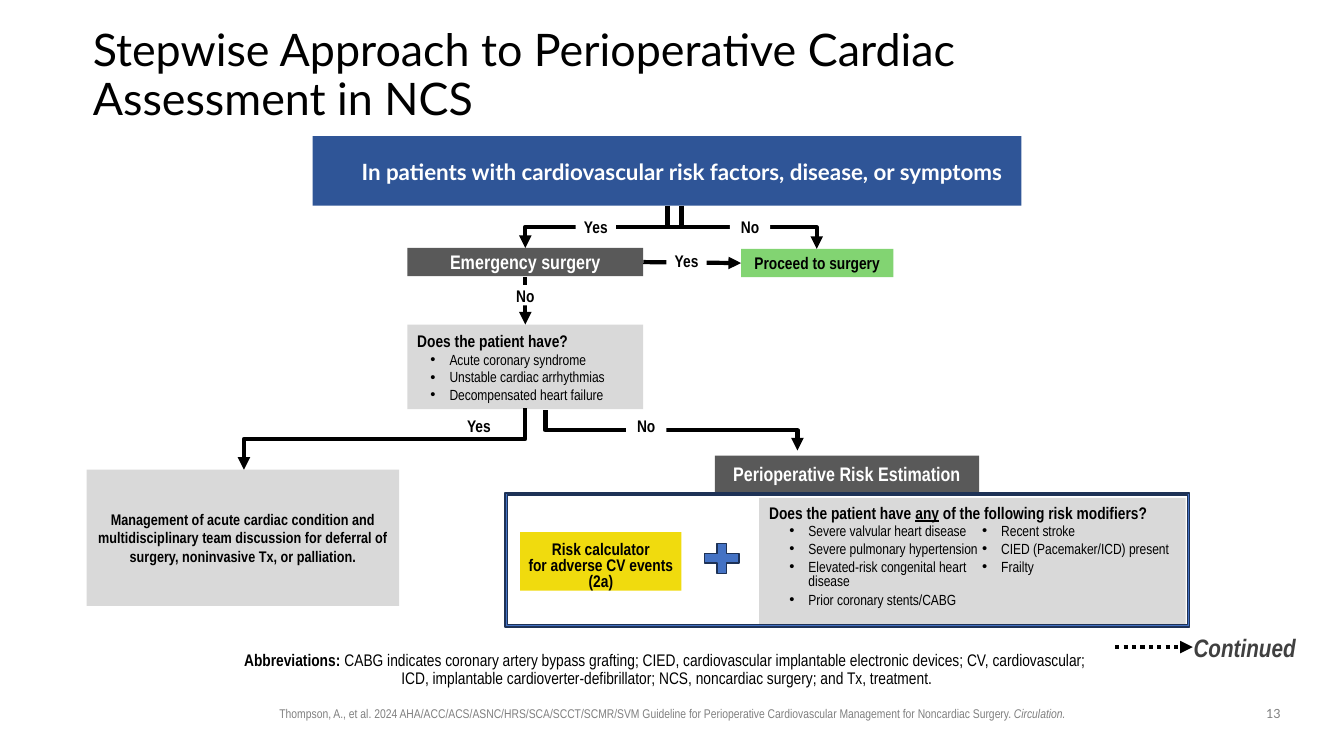
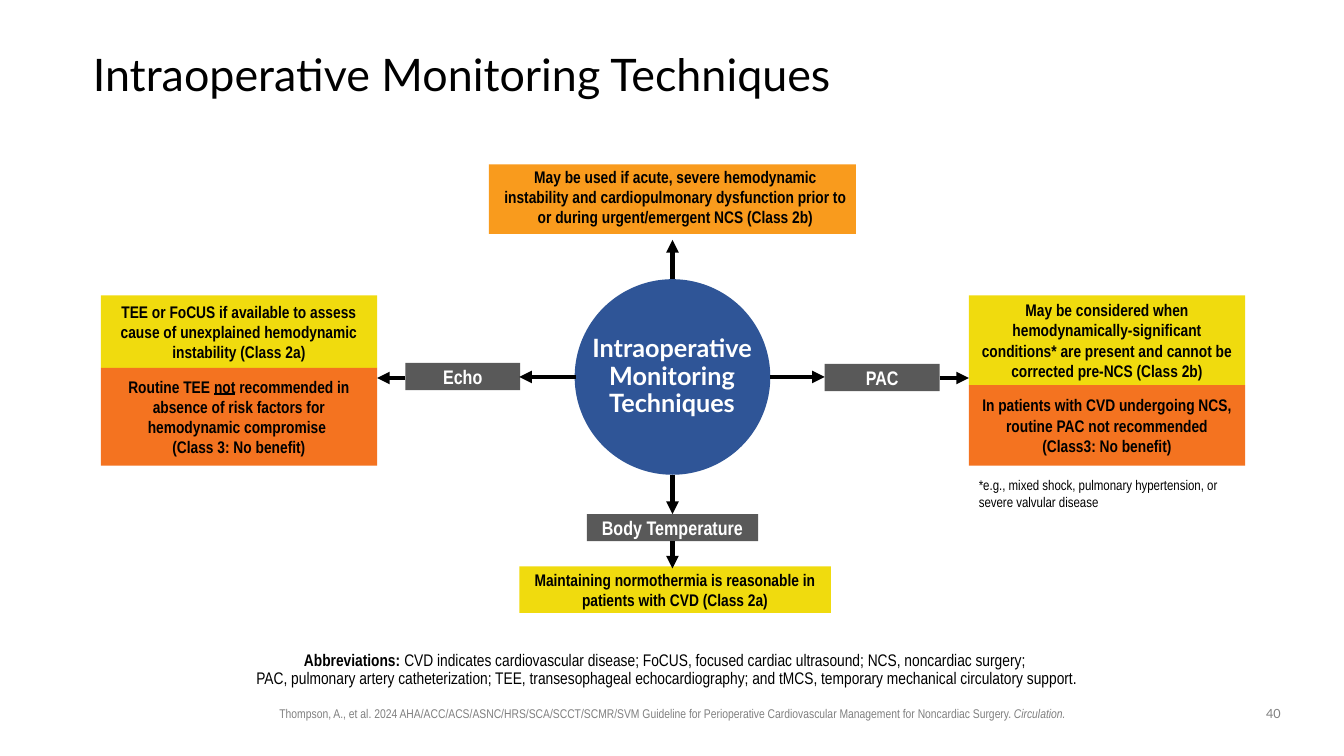
from copy import deepcopy

from lxml import etree
from pptx import Presentation
from pptx import util as u
from pptx.dml.color import RGBColor
from pptx.enum import dml, shapes, text
from pptx.oxml.ns import qn

PX = 9144  # EMU per px, 100 px to the inch
COLORS = {
    "black": "000000", "white": "FFFFFF", "navy": "2F5597", "blue": "4472C4",
    "outline": "1E3256", "dark": "595959", "ink": "404040", "pale": "D9D9D9",
    "grey": "808080", "green": "82D472", "yellow": "F0DB0E",
    "amber": "F99B1D", "orange": "F47320",
}
NARROW, LATO = "Arial Narrow", "Lato"
KIND = shapes.MSO_SHAPE
ALIGN = {"left": text.PP_ALIGN.LEFT, "center": text.PP_ALIGN.CENTER}
ANCHOR = {"top": text.MSO_ANCHOR.TOP, "middle": text.MSO_ANCHOR.MIDDLE,
          "bottom": text.MSO_ANCHOR.BOTTOM}

# ---- Shared content and styles ----
CITATION = [
    ("Thompson, A., et al. 2024 AHA/ACC/ACS/ASNC/HRS/SCA/SCCT/SCMR/SVM Guideline for "
     "Perioperative Cardiovascular Management for Noncardiac Surgery. ", ""),
    ("Circulation.", "i"),
]
STYLES = {
    "header": dict(fill="navy", color="white", size=16, font=LATO, spacing=0.9,
                   inset=(30, 4, 0, 0)),
    "step": dict(fill="dark", color="white", size=14),
    "go": dict(fill="green"),
    "management": dict(fill="pale", size=11),
    "yellow": dict(fill="yellow"),
    "orange": dict(fill="orange"),
    "amber": dict(fill="amber", inset=(13, 3, 7, 7)),
    "calculator": dict(fill="yellow", spacing=0.8, anchor="bottom", inset=(0, 0, 0, 0)),
    "question": dict(fill="pale", align="left"),
    "modifiers": dict(fill="pale", align="left", anchor="top"),
    "label": dict(fill="white", anchor="top", inset=(0, 0, 0, 0)),
    "hub": dict(color="white", size=18, font=LATO, spacing=0.9, inset=(0, 0, 0, 0)),
    "note": dict(size=10, flags="", align="left", anchor="top"),
    "continued": dict(size=18, color="ink", flags="bi", align="left", anchor="top"),
    "abbreviations": dict(flags="", spacing=0.9, anchor="bottom", inset=(0, 5, 10, 5)),
    "citation": dict(size=9, color="grey", anchor="top"),
    "page": dict(size=9, color="grey", flags="", font=LATO, anchor="top"),
}

# ---- Stepwise approach: content ----
STEPWISE = {
    "title": "Stepwise Approach to Perioperative Cardiac Assessment in NCS",
    "title_width": 941,
    "page": "13",
    "abbreviations": "CABG indicates coronary artery bypass grafting; CIED, cardiovascular "
                     "implantable electronic devices; CV, cardiovascular; \nICD, implantable "
                     "cardioverter-defibrillator; NCS, noncardiac surgery; and Tx, treatment.",
}
STEPWISE_BOXES = [
    ("header", (310, 135, 703, 69),
     ["In patients with cardiovascular risk factors, disease, or symptoms"]),
    ("go", (735, 247, 151, 28), ["Proceed to surgery"]),
    ("step", (404, 246, 234, 28), ["Emergency surgery"]),
    ("management", (86, 466, 310, 135),
     ["Management of acute cardiac condition and multidisciplinary team discussion for "
      "deferral of surgery, noninvasive Tx, or palliation."]),
    ("step", (709, 452, 262, 36), ["Perioperative Risk Estimation"]),
    ("modifiers", (753, 494, 423, 128),
     [[("Does the patient have ", "b"), ("any", "bu"),
       (" of the following risk modifiers?", "b")]]),
    ("calculator", (516, 528, 160, 58), ["Risk calculator\nfor adverse CV events (2a)"]),
]
ACUTE_QUESTION = "Does the patient have?"
ACUTE_CONDITIONS = ["Acute coronary syndrome", "Unstable cardiac arrhythmias",
                    "Decompensated heart failure"]
RISK_MODIFIERS = ["Severe valvular heart disease", "Severe pulmonary hypertension",
                  "Elevated-risk congenital heart disease", "Prior coronary stents/CABG",
                  "Recent stroke", "CIED (Pacemaker/ICD) present", "Frailty"]
STEPWISE_BRANCHES = [
    (676, 204, 521, 246), (662, 204, 810, 247),
    (521, 405, 242, 466), (541, 407, 791, 447),
]
STEPWISE_ARROWS = [(521, 275, 521, 322), (638, 260, 735, 261)]
ANSWERS = [("Yes", 571, 215), ("No", 724, 215), ("Yes", 661, 249),
           ("No", 501, 283), ("Yes", 455, 412), ("No", 621, 412)]

# ---- Monitoring techniques: content ----
MONITORING = {
    "title": "Intraoperative Monitoring Techniques",
    "title_width": 1150,
    "page": "40",
    "abbreviations": "CVD indicates cardiovascular disease; FoCUS, focused cardiac ultrasound; "
                     "NCS, noncardiac surgery; \nPAC, pulmonary artery catheterization; TEE, "
                     "transesophageal echocardiography; and tMCS, temporary mechanical "
                     "circulatory support.",
}
MONITORING_BOXES = [
    ("amber", (485, 163, 364, 69),
     ["May be used if acute, severe hemodynamic instability and cardiopulmonary dysfunction "
      "prior to or during urgent/emergent NCS (Class 2b)"]),
    ("step", (402, 360, 114, 27), ["Echo"]),
    ("step", (818, 361, 114, 27), ["PAC"]),
    ("step", (582, 510, 170, 27), ["Body Temperature"]),
    ("yellow", (515, 562, 309, 46),
     ["Maintaining normothermia is reasonable in patients with CVD (Class 2a)"]),
    ("yellow", (100, 293, 274, 72),
     ["TEE or FoCUS if available to assess cause of unexplained hemodynamic instability "
      "(Class 2a)"]),
    ("orange", (100, 365, 274, 97),
     [[("Routine TEE ", "b"), ("not", "bu"),
       (" recommended in absence of risk factors for hemodynamic compromise \n"
        "(Class 3: No benefit)", "b")]]),
    ("yellow", (961, 293, 274, 89),
     ["May be considered when hemodynamically-significant conditions* are present and cannot "
      "be corrected pre-NCS (Class 2b)"]),
    ("orange", (961, 382, 274, 80),
     ["In patients with CVD undergoing NCS, routine PAC not recommended "
      "(Class3: No benefit)"]),
    ("note", (961, 468, 274, 44),
     ["*e.g., mixed shock, pulmonary hypertension, or severe valvular disease"]),
]
HUB = (570, 277, 194, 194)
MONITORING_ARROWS = [
    (667, 277, 667, 238), (667, 471, 667, 510), (764, 374, 818, 374), (571, 374, 515, 374),
    (667, 537, 667, 564), (932, 375, 961, 375), (402, 375, 374, 375),
]


# ---- Drawing helpers ----
def px(*values):
    return [round(v * PX) for v in values]


def rgb(name):
    return RGBColor.from_string(COLORS[name])


def write_paragraph(paragraph, content, size=12, color="black", font=NARROW, flags="b",
                    align="center", spacing=None):
    paragraph.alignment = ALIGN[align]
    if spacing:
        paragraph.line_spacing = spacing
    for words, marks in [(content, flags)] if isinstance(content, str) else content:
        for i, line in enumerate(words.split("\n")):
            if i:
                paragraph.add_line_break()
            run = paragraph.add_run()
            run.text = line
            run.font.size, run.font.name = u.Pt(size), font
            run.font.color.rgb = rgb(color)
            run.font.bold, run.font.italic = "b" in marks, "i" in marks
            run.font.underline = "u" in marks
            if i:  # the break takes the size of the run after it
                run._r.getprevious().insert(0, deepcopy(run._r.rPr))


def set_frame(frame, anchor="middle", inset=(10, 5, 10, 5)):
    frame.word_wrap = True
    frame.auto_size = text.MSO_AUTO_SIZE.NONE
    frame.vertical_anchor = ANCHOR[anchor]
    (frame.margin_left, frame.margin_top,
     frame.margin_right, frame.margin_bottom) = px(*inset)


def paint(shape, fill, outline=None):
    shape.shadow.inherit = False
    shape.fill.solid()
    shape.fill.fore_color.rgb = rgb(fill)
    if outline:
        shape.line.color.rgb = rgb(outline)
        shape.line.width = u.Pt(1)
    else:
        shape.line.fill.background()


def add_figure(slide, kind, place, fill, outline=None):
    figure = slide.shapes.add_shape(kind, *px(*place))
    paint(figure, fill, outline)
    return figure


def add_box(slide, style, place, paragraphs):
    look = dict(STYLES[style])
    fill = look.pop("fill", None)
    frame_look = {k: look.pop(k) for k in ("anchor", "inset") if k in look}
    if fill:
        box = add_figure(slide, KIND.RECTANGLE, place, fill)
    else:
        box = slide.shapes.add_textbox(*px(*place))
    frame = box.text_frame
    set_frame(frame, **frame_look)
    for i, content in enumerate(paragraphs):
        paragraph = frame.add_paragraph() if i else frame.paragraphs[0]
        write_paragraph(paragraph, content, **look)
    return frame


def add_bullets(frame, items, margin, spacing=None, after=None):
    for item in items:
        first = frame.paragraphs[0]
        paragraph = frame.add_paragraph() if first.runs else first
        props = paragraph._p.get_or_add_pPr()
        props.set("marL", str(margin * PX))
        props.set("indent", str(-19 * PX))
        etree.SubElement(props, qn("a:buFont")).set("typeface", "Arial")
        etree.SubElement(props, qn("a:buChar")).set("char", "•")
        if after:
            paragraph.space_after = u.Pt(after)
        write_paragraph(paragraph, item, size=10.5, flags="", align="left", spacing=spacing)


def finish_arrow(arrow, dash=None):
    arrow.line.color.rgb = rgb("black")
    arrow.line.width = u.Pt(3)
    if dash:
        arrow.line.dash_style = dash
    props = arrow._element.spPr
    etree.SubElement(props.find(qn("a:ln")), qn("a:tailEnd")).set("type", "triangle")
    etree.SubElement(props, qn("a:effectLst"))


def add_arrow(slide, ends, dash=None):
    finish_arrow(slide.shapes.add_connector(shapes.MSO_CONNECTOR.STRAIGHT, *px(*ends)), dash)


def add_branch(slide, x1, y1, x2, y2):
    """Elbow that leaves downwards: a sideways elbow turned about its centre."""
    run, drop = abs(x2 - x1), y2 - y1
    left, top = (x1 + x2 - drop) / 2, (y1 + y2 - run) / 2
    start, end, turn = left, left + drop, 90
    if x2 > x1:
        start, end, turn = end, start, 270
    branch = slide.shapes.add_connector(
        shapes.MSO_CONNECTOR.ELBOW, *px(start, top, end, top + run))
    branch._element.spPr.find(qn("a:xfrm")).set("rot", str(turn * 60000))
    finish_arrow(branch)


def new_slide(deck, content):
    slide = deck.slides.add_slide(deck.slide_layouts[5])
    title = slide.shapes.title
    title.left, title.top, title.width, title.height = px(92, 40, content["title_width"], 72)
    set_frame(title.text_frame, inset=(0, 0, 0, 0))
    write_paragraph(title.text_frame.paragraphs[0], content["title"], size=32, font=LATO,
                    flags="", align="left", spacing=0.9)
    add_box(slide, "citation", (236, 695, 862, 25), [CITATION])
    add_box(slide, "abbreviations", (188, 642, 957, 46),
            [[("Abbreviations: ", "b"), (content["abbreviations"], "")]])
    add_box(slide, "page", (1242, 695, 42, 26), [content["page"]])
    return slide


# ---- Slides ----
def build_stepwise(deck):
    slide = new_slide(deck, STEPWISE)
    for box in STEPWISE_BOXES:
        add_box(slide, *box)
    question = add_box(slide, "question", (404, 322, 234, 84), [ACUTE_QUESTION])
    add_bullets(question, ACUTE_CONDITIONS, margin=32)

    # Risk modifiers in two columns
    modifiers = slide.shapes.add_textbox(*px(773, 516, 402, 110)).text_frame
    set_frame(modifiers, anchor="top")
    modifiers.auto_size = text.MSO_AUTO_SIZE.SHAPE_TO_FIT_TEXT
    modifiers._txBody.bodyPr.set("numCol", "2")
    add_bullets(modifiers, RISK_MODIFIERS, margin=19, spacing=0.8, after=3)

    # Flow lines, with the answers over them
    for branch in STEPWISE_BRANCHES:
        add_branch(slide, *branch)
    for ends in STEPWISE_ARROWS:
        add_arrow(slide, ends)
    for answer, left, top in ANSWERS:
        add_box(slide, "label", (left, top, 40, 20), [answer])

    add_arrow(slide, (1106, 642, 1183, 642), dml.MSO_LINE.ROUND_DOT)
    add_box(slide, "continued", (1174, 622, 160, 40), ["Continued"])
    add_figure(slide, KIND.MATH_PLUS, (693, 534, 46, 40), "blue", "outline")
    border = add_figure(slide, KIND.FRAME, (501, 489, 679, 133), "blue", "outline")
    border.adjustments[0] = 0.016


def build_monitoring(deck):
    slide = new_slide(deck, MONITORING)
    add_figure(slide, KIND.OVAL, HUB, "navy")
    add_box(slide, "hub", (557, 356, 219, 36), [MONITORING["title"]])
    for box in MONITORING_BOXES:
        add_box(slide, *box)
    for ends in MONITORING_ARROWS:
        add_arrow(slide, ends)


def main():
    deck = Presentation()
    deck.slide_width, deck.slide_height = px(1333, 750)
    build_stepwise(deck)
    build_monitoring(deck)
    deck.save("out.pptx")


if __name__ == "__main__":
    main()
